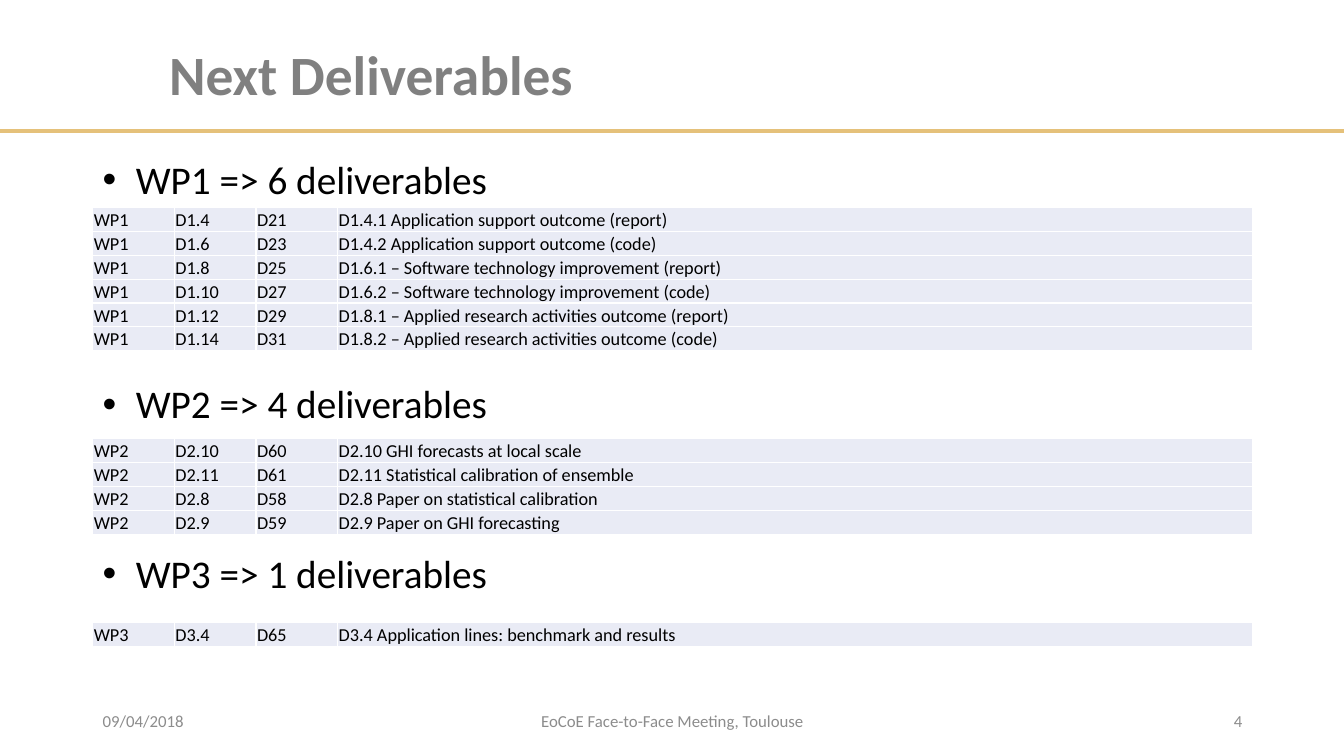
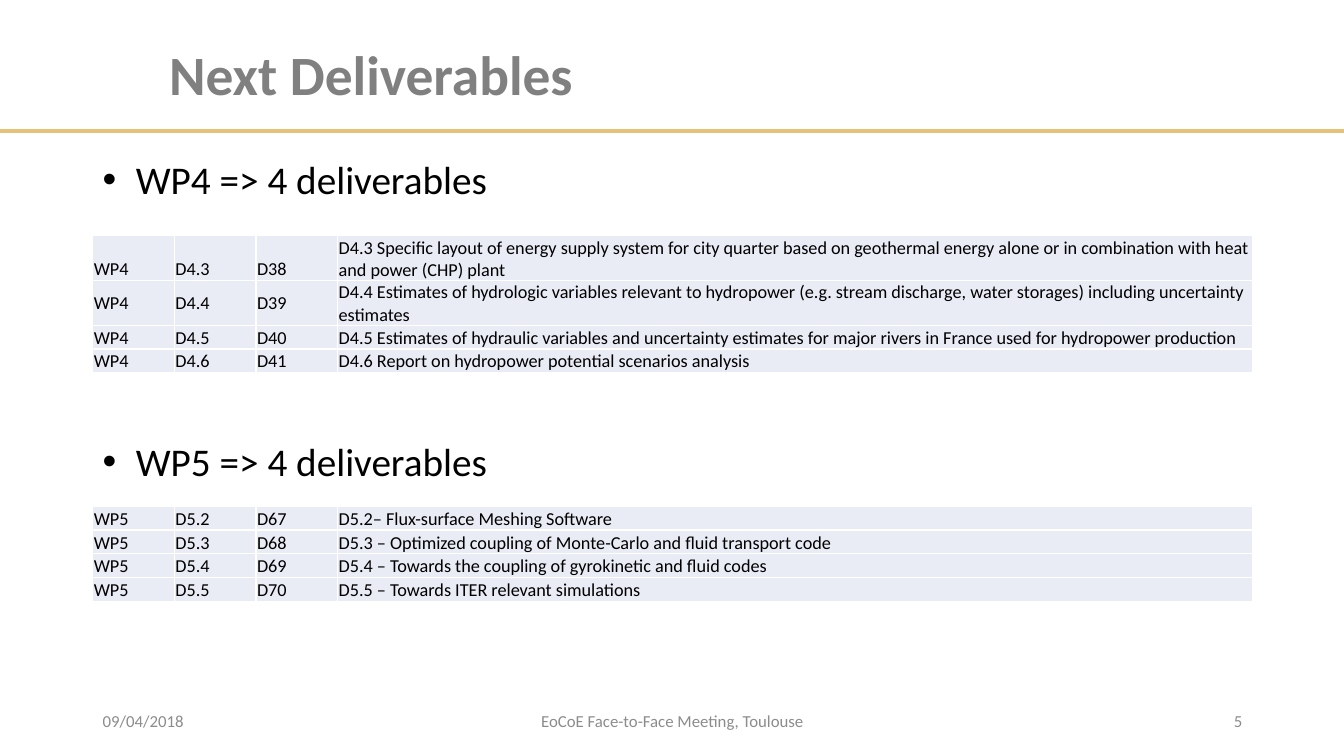
from dataclasses import dataclass
from typing import NamedTuple

from lxml import etree
from pptx import Presentation
from pptx.dml.color import RGBColor
from pptx.enum.shapes import MSO_CONNECTOR
from pptx.enum.text import MSO_ANCHOR, PP_ALIGN
from pptx.oxml.ns import qn
from pptx.presentation import Presentation as Deck
from pptx.slide import Slide
from pptx.table import _Cell as Cell
from pptx.text.text import _Paragraph as Paragraph
from pptx.util import Inches, Pt

STRAIGHT = MSO_CONNECTOR.STRAIGHT
TOP, MIDDLE, BOTTOM = MSO_ANCHOR.TOP, MSO_ANCHOR.MIDDLE, MSO_ANCHOR.BOTTOM
LEFT, CENTER, RIGHT = PP_ALIGN.LEFT, PP_ALIGN.CENTER, PP_ALIGN.RIGHT


class TextStyle(NamedTuple):
    size: float
    color: RGBColor
    bold: bool = False


@dataclass(frozen=True)
class Theme:
    font: str = "Calibri"
    bullet_font: str = "Arial"
    title: TextStyle = TextStyle(39.6, RGBColor(0x80, 0x80, 0x80), True)
    heading: TextStyle = TextStyle(28, RGBColor(0, 0, 0))
    cell: TextStyle = TextStyle(13, RGBColor(0, 0, 0))
    footer: TextStyle = TextStyle(12, RGBColor(0x8C, 0x8C, 0x8C))
    rule: RGBColor = RGBColor(0xE5, 0xC1, 0x7A)
    cell_fill: RGBColor = RGBColor(0xE9, 0xEB, 0xF5)
    border: RGBColor = RGBColor(0xFF, 0xFF, 0xFF)
    rule_width: float = 2.25
    border_width: float = 1
    line_spacing: float = 0.9


THEME = Theme()
SLIDE_WIDTH, SLIDE_HEIGHT = Inches(13.33), Inches(7.5)
MARGIN, CONTENT_WIDTH = Inches(0.92), Inches(11.5)
CODE_WIDTH = Inches(0.81)
TALL_ROW = Inches(0.44)
HEADING_HEIGHT = Inches(0.53)
HEADING_INDENT = Inches(0.33)
FOOTER_TOP, FOOTER_HEIGHT = Inches(6.95), Inches(0.4)
TITLE = "Next Deliverables"
DATE = "09/04/2018"
MEETING = "EoCoE Face-to-Face Meeting, Toulouse"


class Box(NamedTuple):
    left: int
    top: int
    width: int
    height: int


class Deliverable(NamedTuple):
    code: str
    number: str
    title: str
    tall: bool = False
    code_anchor: MSO_ANCHOR = BOTTOM


@dataclass(frozen=True)
class WorkPackage:
    name: str
    heading_top: float
    table_top: float
    table_height: float
    deliverables: tuple[Deliverable, ...]


@dataclass(frozen=True)
class Page:
    number: int
    packages: tuple[WorkPackage, ...]


PAGES = (
    Page(4, (
        WorkPackage("WP1", 1.54, 2.06, 1.42, (
            Deliverable("D1.4", "D21", "D1.4.1 Application support outcome (report)"),
            Deliverable("D1.6", "D23", "D1.4.2 Application support outcome (code)"),
            Deliverable("D1.8", "D25", "D1.6.1 – Software technology improvement (report)"),
            Deliverable("D1.10", "D27", "D1.6.2 – Software technology improvement (code)"),
            Deliverable("D1.12", "D29", "D1.8.1 – Applied research activities outcome (report)"),
            Deliverable("D1.14", "D31", "D1.8.2 – Applied research activities outcome (code)"),
        )),
        WorkPackage("WP2", 3.77, 4.35, 0.95, (
            Deliverable("D2.10", "D60", "D2.10 GHI forecasts at local scale"),
            Deliverable("D2.11", "D61", "D2.11 Statistical calibration of ensemble"),
            Deliverable("D2.8", "D58", "D2.8 Paper on statistical calibration"),
            Deliverable("D2.9", "D59", "D2.9 Paper on GHI forecasting"),
        )),
        WorkPackage("WP3", 5.45, 6.17, 0.24, (
            Deliverable("D3.4", "D65", "D3.4 Application lines: benchmark and results"),
        )),
    )),
    Page(5, (
        WorkPackage("WP4", 1.54, 2.34, 1.35, (
            Deliverable("D4.3", "D38", "D4.3 Specific layout of energy supply system for city quarter "
                        "based on geothermal energy alone or in combination with heat "
                        "and power (CHP) plant", True),
            Deliverable("D4.4", "D39", "D4.4 Estimates of hydrologic variables relevant to hydropower "
                        "(e.g. stream discharge, water storages) including uncertainty "
                        "estimates", True, MIDDLE),
            Deliverable("D4.5", "D40", "D4.5 Estimates of hydraulic variables and uncertainty estimates "
                        "for major rivers in France used for hydropower production"),
            Deliverable("D4.6", "D41", "D4.6 Report on hydropower potential scenarios analysis"),
        )),
        WorkPackage("WP5", 4.34, 5.02, 0.95, (
            Deliverable("D5.2", "D67", "D5.2– Flux-surface Meshing Software"),
            Deliverable("D5.3", "D68", "D5.3 – Optimized coupling of Monte-Carlo and fluid transport code"),
            Deliverable("D5.4", "D69", "D5.4 – Towards the coupling of gyrokinetic and fluid codes"),
            Deliverable("D5.5", "D70", "D5.5 – Towards ITER relevant simulations"),
        )),
    )),
)


def add_run(paragraph: Paragraph, text: str, style: TextStyle) -> None:
    run = paragraph.add_run()
    run.text = text
    run.font.name = THEME.font
    run.font.size = Pt(style.size)
    run.font.bold = style.bold
    run.font.color.rgb = style.color


def add_text(slide: Slide, box: Box, text: str, style: TextStyle,
             align: PP_ALIGN = LEFT, anchor: MSO_ANCHOR = MIDDLE) -> Paragraph:
    frame = slide.shapes.add_textbox(*box).text_frame
    frame.word_wrap = True
    frame.vertical_anchor = anchor
    paragraph = frame.paragraphs[0]
    paragraph.alignment = align
    add_run(paragraph, text, style)
    return paragraph


def add_bullet(paragraph: Paragraph) -> None:
    properties = paragraph._p.get_or_add_pPr()
    properties.set("marL", str(HEADING_INDENT))
    properties.set("indent", str(-HEADING_INDENT))
    etree.SubElement(properties, qn("a:buFont"), typeface=THEME.bullet_font)
    etree.SubElement(properties, qn("a:buChar"), char="•")


def add_rule(slide: Slide) -> None:
    height = Inches(1.3)
    rule = slide.shapes.add_connector(STRAIGHT, 0, height, SLIDE_WIDTH, height)
    rule.line.color.rgb = THEME.rule
    rule.line.width = Pt(THEME.rule_width)
    etree.SubElement(rule._element.spPr, qn("a:effectLst"))


def add_frame(slide: Slide, number: int) -> None:
    add_rule(slide)
    title_box = Box(Inches(1.58), Inches(0.4), Inches(10.83), Inches(0.73))
    title = add_text(slide, title_box, TITLE, THEME.title)
    title.line_spacing = THEME.line_spacing
    for left, width, text, align in (
        (0.92, 3, DATE, LEFT),
        (4.42, 4.5, MEETING, CENTER),
        (9.42, 3, str(number), RIGHT),
    ):
        box = Box(Inches(left), FOOTER_TOP, Inches(width), FOOTER_HEIGHT)
        add_text(slide, box, text, THEME.footer, align)


def set_borders(cell: Cell) -> None:
    properties = cell._tc.get_or_add_tcPr()
    for side in ("lnL", "lnR", "lnT", "lnB"):
        line = etree.SubElement(properties, qn(f"a:{side}"), w=str(Pt(THEME.border_width)))
        fill = etree.SubElement(line, qn("a:solidFill"))
        etree.SubElement(fill, qn("a:srgbClr"), val=str(THEME.border))


def fill_cell(cell: Cell, text: str, anchor: MSO_ANCHOR) -> None:
    cell.margin_left = cell.margin_top = cell.margin_right = Inches(0.01)
    cell.margin_bottom = 0
    cell.vertical_anchor = anchor
    set_borders(cell)
    cell.fill.solid()
    cell.fill.fore_color.rgb = THEME.cell_fill
    add_run(cell.text_frame.paragraphs[0], text, THEME.cell)


def add_deliverables(slide: Slide, package: WorkPackage) -> None:
    items = package.deliverables
    height = Inches(package.table_height)
    table = slide.shapes.add_table(len(items), 4, MARGIN, Inches(package.table_top),
                                   CONTENT_WIDTH, height).table
    table.first_row = False
    table.horz_banding = False
    widths = (CODE_WIDTH,) * 3 + (CONTENT_WIDTH - 3 * CODE_WIDTH,)
    for column, width in zip(table.columns, widths):
        column.width = width
    tall_count = sum(item.tall for item in items)
    short_row = (height - tall_count * TALL_ROW) // (len(items) - tall_count)
    for row, item in zip(table.rows, items):
        row.height = TALL_ROW if item.tall else short_row
        *code_cells, title_cell = row.cells
        for cell, text in zip(code_cells, (package.name, item.code, item.number)):
            fill_cell(cell, text, item.code_anchor)
        fill_cell(title_cell, item.title, BOTTOM)


def add_package(slide: Slide, package: WorkPackage) -> None:
    box = Box(MARGIN, Inches(package.heading_top), CONTENT_WIDTH, HEADING_HEIGHT)
    text = f"{package.name} => {len(package.deliverables)} deliverables"
    heading = add_text(slide, box, text, THEME.heading, anchor=TOP)
    heading.line_spacing = THEME.line_spacing
    add_bullet(heading)
    add_deliverables(slide, package)


def add_page(presentation: Deck, page: Page) -> None:
    slide = presentation.slides.add_slide(presentation.slide_layouts[6])
    add_frame(slide, page.number)
    for package in page.packages:
        add_package(slide, package)


def main() -> None:
    presentation = Presentation()
    presentation.slide_width = SLIDE_WIDTH
    presentation.slide_height = SLIDE_HEIGHT
    for page in PAGES:
        add_page(presentation, page)
    presentation.save("out.pptx")


if __name__ == "__main__":
    main()
